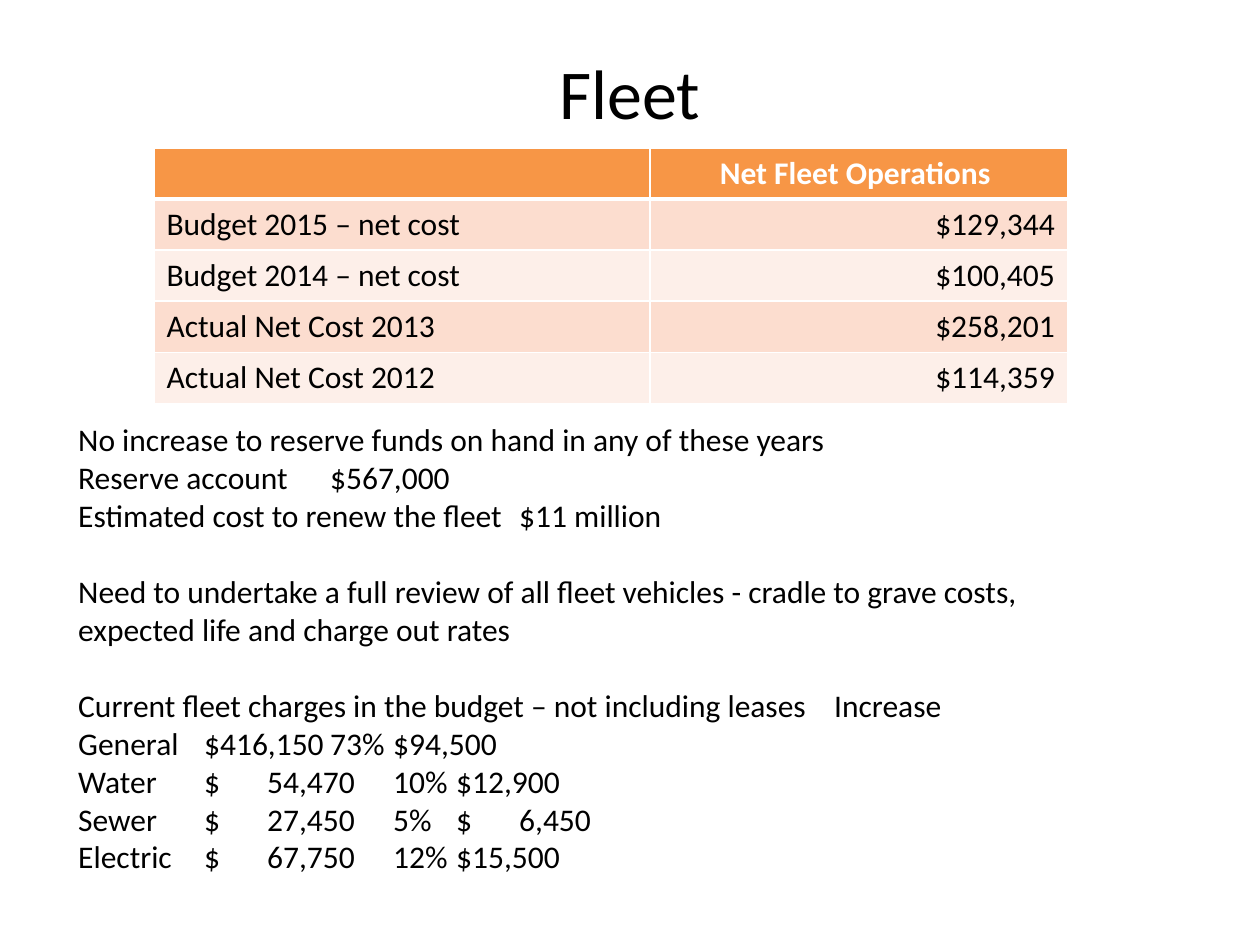
from lxml import etree
from pptx import Presentation
from pptx import util as u
from pptx.dml.color import RGBColor
from pptx.enum import text
from pptx.oxml import ns

Pt = u.Pt
ALIGN = text.PP_ALIGN
COLORS = {"text": "000000", "white": "FFFFFF", "header": "F79646",
          "band_dark": "FCDDCF", "band_light": "FDEFE9"}
COST_ROWS = [
    ("", "Net Fleet Operations "),
    ("Budget 2015 – net cost", "$129,344"),
    ("Budget 2014 – net cost", "$100,405"),
    ("Actual Net Cost 2013", "$258,201"),
    ("Actual Net Cost 2012", "$114,359"),
]
CHARGES = [
    ("General", "$416,150", "73%", "$94,500"),
    ("Water", "$ 54,470", "10%", "$12,900"),
    ("Sewer", "$ 27,450", "5%", "$ 6,450"),
    ("Electric", "$ 67,750", "12%", "$15,500"),
]
# Left and right edge of each charge column, from the text margin
CHARGE_EDGES = [(288, 356), (432, 463), (504, 563)]
LINE = 22


def sub(parent, tag, **attrs):
    return etree.SubElement(parent, ns.qn(tag), attrs)


class SlideBuilder:
    def __init__(self, slide):
        self.s = slide
        self.font = {"name": "Calibri", "size": Pt(18), "bold": False}

    def run(self, p, content, color="text", **changes):
        r = p.add_run()
        r.text = content
        for key, value in {**self.font, **changes}.items():
            setattr(r.font, key, value)
        r.font.color.rgb = RGBColor.from_string(COLORS[color])

    def place(self, sp, left, top, width, height, anchor):
        box = {"left": left, "top": top, "width": width, "height": height}
        for key, value in box.items():
            setattr(sp, key, Pt(value))
        frame = {"word_wrap": True, "vertical_anchor": anchor,
                 "auto_size": text.MSO_AUTO_SIZE.NONE}
        for key, value in frame.items():
            setattr(sp.text_frame, key, value)
        return sp.text_frame

    def title(self, content, *box):
        tf = self.place(self.s.shapes.title, *box, text.MSO_ANCHOR.MIDDLE)
        p = tf.paragraphs[0]
        p.alignment = ALIGN.CENTER
        self.run(p, content, size=Pt(40))

    def body(self, lines, *box):
        """Each line is (text, tab stops, space before)."""
        tf = self.place(self.s.placeholders[1], *box, text.MSO_ANCHOR.TOP)
        for i, (content, stops, before) in enumerate(lines):
            p = tf.add_paragraph() if i else tf.paragraphs[0]
            p.space_before = Pt(before)
            self.run(p, content)
            pPr = p._p.get_or_add_pPr()
            pPr.set("marL", "0")
            pPr.set("indent", "0")
            sub(pPr, "a:buNone")
            if stops:
                tabs = sub(pPr, "a:tabLst")
                for pos, side in stops:
                    sub(tabs, "a:tab", pos=str(Pt(pos)), algn=side)

    def borders(self, cell, bottom):
        tcPr = cell._tc.get_or_add_tcPr()
        for side in "LRTB":
            width = bottom if side == "B" else 1
            ln = sub(tcPr, "a:ln" + side, w=str(Pt(width)))
            sub(sub(ln, "a:solidFill"), "a:srgbClr", val=COLORS["white"])

    def table(self, rows, left, top, widths, row_height):
        frame = self.s.shapes.add_table(
            len(rows), len(widths), Pt(left), Pt(top),
            Pt(sum(widths)), Pt(row_height * len(rows)))
        table = frame.table
        for column, width in zip(table.columns, widths):
            column.width = Pt(width)
        for i, row in enumerate(rows):
            table.rows[i].height = Pt(row_height)
            header = i == 0
            fill = "header" if header else ("band_light", "band_dark")[i % 2]
            for j, content in enumerate(row):
                cell = table.cell(i, j)
                self.borders(cell, 3 if header else 1)
                cell.fill.solid()
                cell.fill.fore_color.rgb = RGBColor.from_string(COLORS[fill])
                p = cell.text_frame.paragraphs[0]
                if j:
                    p.alignment = ALIGN.CENTER if header else ALIGN.RIGHT
                if content:
                    self.run(p, content, "white" if header else "text",
                             bold=header)


def charge_line(name, *values):
    """Right-align each value; a detached dollar sign stays at the left edge."""
    parts, stops = [name], []
    for value, (left, right) in zip(values, CHARGE_EDGES):
        if value.startswith("$ "):
            stops.append((left, "l"))
        stops.append((right, "r"))
        parts.extend(value.split(" "))
    return "\t".join(parts), stops, 0


def main():
    prs = Presentation()
    prs.slide_width, prs.slide_height = Pt(720), Pt(540)
    slide = SlideBuilder(prs.slides.add_slide(prs.slide_layouts[1]))

    # Title and net cost table
    slide.title("Fleet", 36, 21.6, 648, 61.2)
    slide.table(COST_ROWS, 88, 84.5, [283.5, 238.5], 29.2)

    # Reserves, review and fleet charges
    reserve_stop = [(360, "l")]
    lines = [
        ("No increase to reserve funds on hand in any of these years", [], 0),
        ("Reserve account\t$567,000", reserve_stop, 0),
        ("Estimated cost to renew the fleet\t$11 million", reserve_stop, 0),
        ("Need to undertake a full review of all fleet vehicles - cradle to "
         "grave costs, expected life and charge out rates", [], LINE),
        ("Current fleet charges in the budget – not including leases"
         "\tIncrease", [(504, "l")], LINE),
    ]
    lines += [charge_line(*charge) for charge in CHARGES]
    slide.body(lines, 37.5, 236.5, 611, 269)

    prs.save("out.pptx")


if __name__ == "__main__":
    main()
